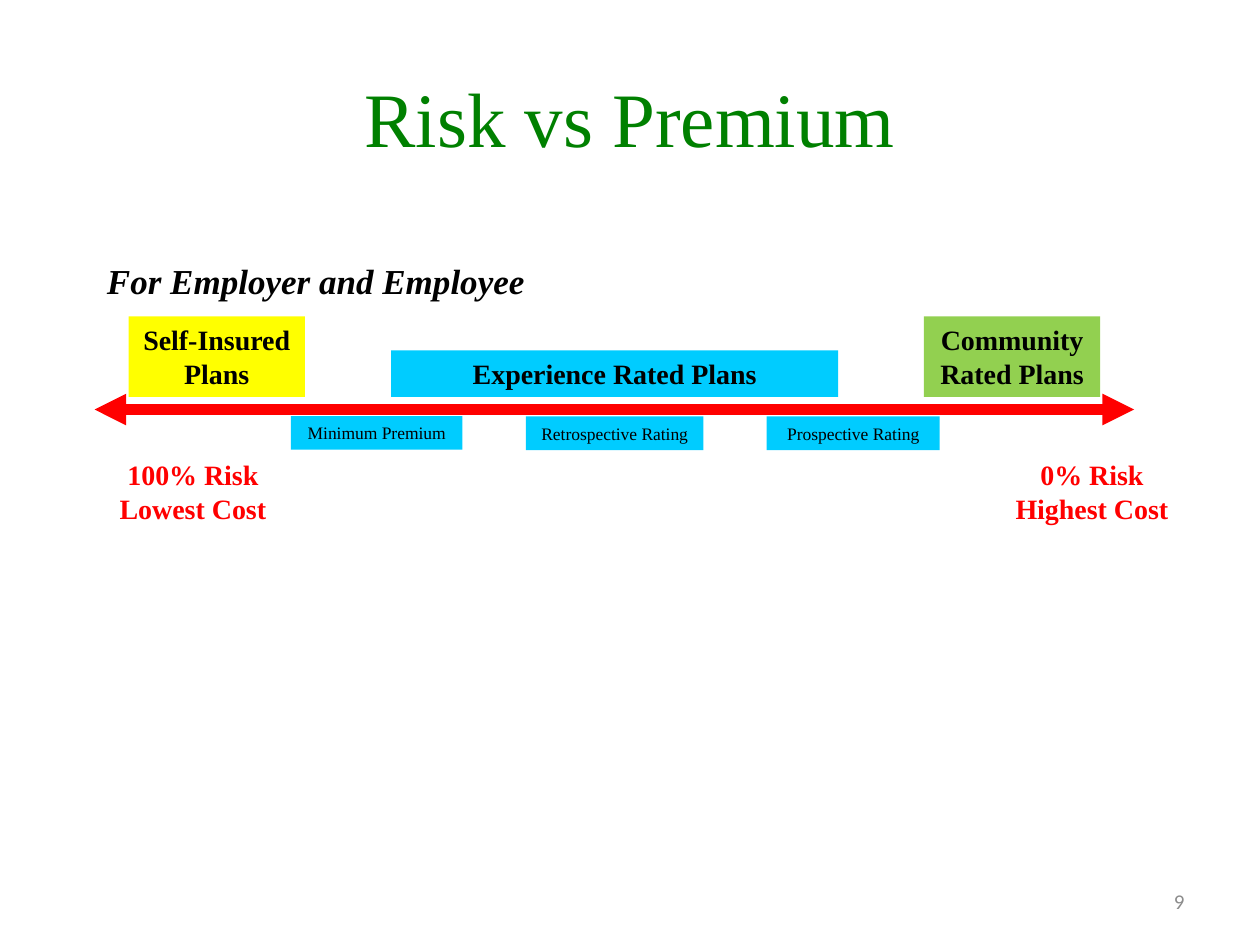
from lxml import etree
from pptx import Presentation
from pptx.dml.color import RGBColor
from pptx.enum.shapes import MSO_CONNECTOR, MSO_SHAPE
from pptx.enum.text import MSO_ANCHOR, PP_ALIGN
from pptx.oxml.ns import qn
from pptx.util import Pt

LEFT, MID, RIGHT = PP_ALIGN.LEFT, PP_ALIGN.CENTER, PP_ALIGN.RIGHT
TOP, MIDDLE = MSO_ANCHOR.TOP, MSO_ANCHOR.MIDDLE
RECT, LINE = MSO_SHAPE.RECTANGLE, MSO_CONNECTOR.STRAIGHT
BLACK = RGBColor(0x00, 0x00, 0x00)
RED = RGBColor(0xFF, 0x00, 0x00)
GREEN = RGBColor(0x00, 0x80, 0x00)
LIME = RGBColor(0x92, 0xD0, 0x50)
YELLOW = RGBColor(0xFF, 0xFF, 0x00)
CYAN = RGBColor(0x00, 0xCC, 0xFF)
GRAY = RGBColor(0x8C, 0x8C, 0x8C)
SERIF, SANS = "Times New Roman", "Calibri"


def write(shape, lines, size, color=BLACK, bold=False, italic=False,
          align=MID, anchor=TOP, face=SERIF):
    frame = shape.text_frame
    frame.word_wrap = True
    frame.vertical_anchor = anchor
    for i, line in enumerate(lines):
        para = frame.add_paragraph() if i else frame.paragraphs[0]
        para.alignment = align
        run = para.add_run()
        run.text = line
        font = run.font
        font.name, font.size = face, Pt(size)
        font.bold, font.italic = bold, italic
        font.color.rgb = color


def place(left, top, width, height):
    return Pt(left), Pt(top), Pt(width), Pt(height)


deck = Presentation()
deck.slide_width, deck.slide_height = Pt(720), Pt(540)
slide = deck.slides.add_slide(deck.slide_layouts[5])
shapes = slide.shapes

# Title
title = shapes.title
title.left, title.top, title.width, title.height = place(36, 21.6, 648, 90)
write(title, ["Risk vs Premium"], 44, GREEN, anchor=MIDDLE)

# Slide number
number = shapes.add_textbox(*place(516, 500.5, 168, 28.75))
write(number, ["9"], 12, GRAY, align=RIGHT, anchor=MIDDLE, face=SANS)

# Risk scale with an arrowhead at each end
scale = shapes.add_connector(LINE, Pt(54), Pt(234), Pt(648), Pt(234))
scale.line.color.rgb = RED
scale.line.width = Pt(6)
stroke = scale.line._get_or_add_ln()
for end in ("a:headEnd", "a:tailEnd"):
    etree.SubElement(stroke, qn(end), type="triangle")
etree.SubElement(scale._element.spPr, qn("a:effectLst"))

# Heading above the scale
heading = shapes.add_textbox(*place(54, 144.75, 450, 31.5))
write(heading, ["For Employer and Employee"], 20, bold=True, italic=True,
      align=LEFT)

# Labels at the two ends of the scale
for left, width, lines in (
    (54, 112.5, ["100% Risk", "Lowest Cost"]),
    (558, 132, ["0% Risk", "Highest Cost"]),
):
    label = shapes.add_textbox(*place(left, 258, width, 46))
    write(label, lines, 16, RED, bold=True)

# Plans above the scale, rating methods below it
for left, top, width, height, fill, text, size in (
    (528, 180.75, 100.75, 46, LIME, "Community Rated Plans", 16),
    (223.5, 200.25, 255.5, 26.5, CYAN, "Experience Rated Plans", 16),
    (73.5, 180.75, 100.75, 46, YELLOW, "Self-Insured Plans", 16),
    (166.25, 237.75, 98, 19.25, CYAN, "Minimum Premium", 10),
    (300.5, 238, 101.5, 19.25, CYAN, "Retrospective Rating", 10),
    (438, 238, 99, 19.25, CYAN, "Prospective Rating", 10),
):
    box = shapes.add_shape(RECT, *place(left, top, width, height))
    box.shadow.inherit = False
    box.fill.solid()
    box.fill.fore_color.rgb = fill
    box.line.fill.background()
    write(box, [text], size, bold=size == 16)

deck.save("out.pptx")
